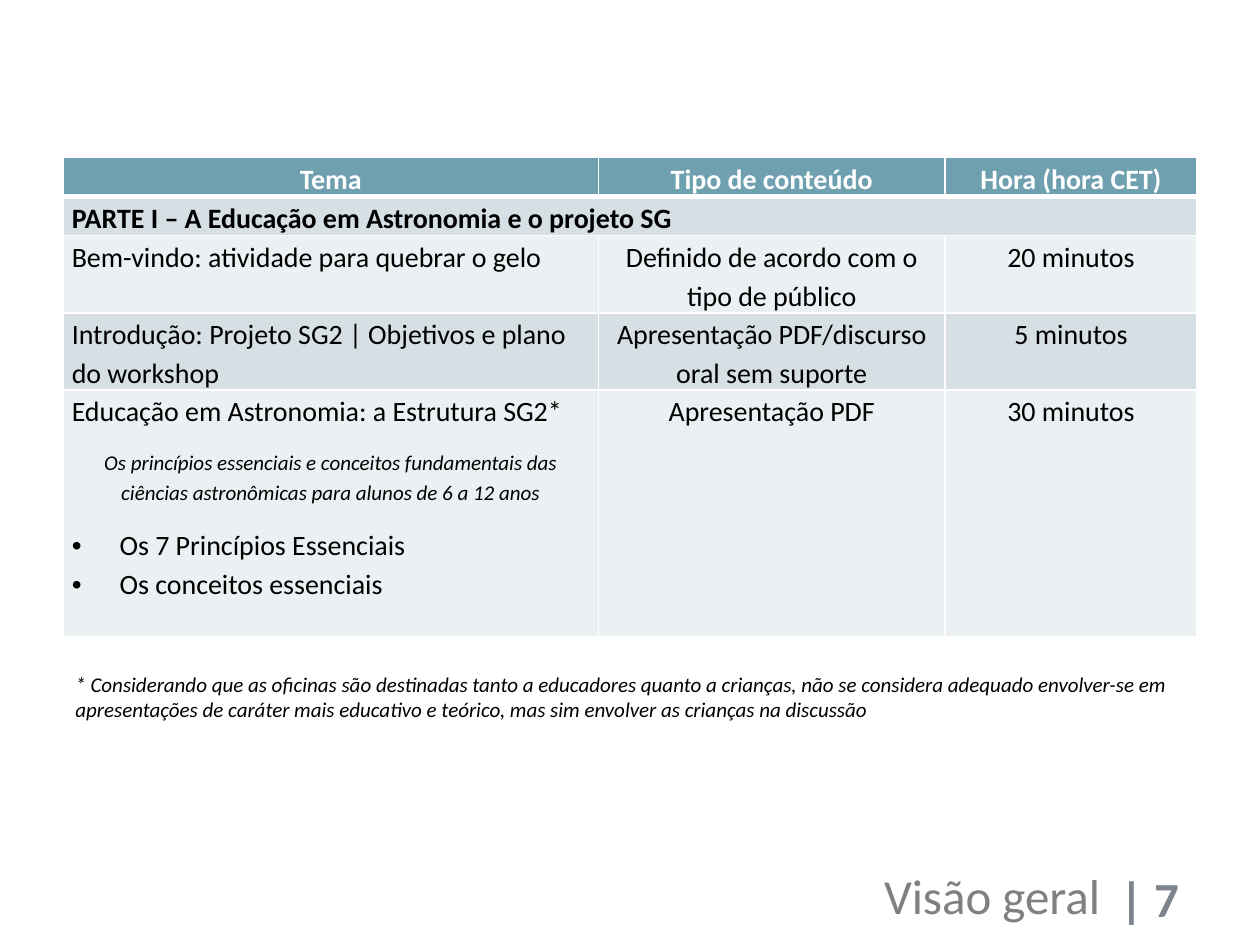
from dataclasses import dataclass

from lxml import etree
from pptx import Presentation
from pptx.dml.color import RGBColor
from pptx.enum.text import MSO_AUTO_SIZE, PP_ALIGN
from pptx.oxml.ns import qn
from pptx.util import Inches, Pt

LEFT, CENTER, RIGHT = PP_ALIGN.LEFT, PP_ALIGN.CENTER, PP_ALIGN.RIGHT
FIT_SHAPE = MSO_AUTO_SIZE.SHAPE_TO_FIT_TEXT


@dataclass(frozen=True)
class Theme:
    font: str = "Calibri"
    white: str = "FFFFFF"
    text: str = "000000"
    title: str = "808080"
    page_number: str = "7E848D"
    header_fill: str = "6EA0B0"
    dark_band: str = "D5DFE4"
    light_band: str = "EBF0F2"
    title_size: int = 28
    body_size: int = 16
    note_size: int = 12


THEME = Theme()

COLUMN_WIDTHS = [4.25, 2.75, 2]
ROW_HEIGHTS = [0.31, 0.31, 0.61, 0.61, 1.96]
HEADERS = ["Tema", "Tipo de conteúdo", "Hora (hora CET)"]
SECTION = "PARTE I – A Educação em Astronomia e o projeto SG"
SESSIONS = [
    ["Bem-vindo: atividade para quebrar o gelo",
     "Definido de acordo com o tipo de público", "20 minutos"],
    ["Introdução: Projeto SG2 | Objetivos e plano do workshop",
     "Apresentação PDF/discurso oral sem suporte", "5 minutos"],
    ["Educação em Astronomia: a Estrutura SG2*", "Apresentação PDF", "30 minutos"],
]
SUBTITLE = ("Os princípios essenciais e conceitos fundamentais das ciências "
            "astronômicas para alunos de 6 a 12 anos")
BULLETS = ["Os 7 Princípios Essenciais", "Os conceitos essenciais"]
FOOTNOTE = ("* Considerando que as oficinas são destinadas tanto a educadores quanto a "
            "crianças, não se considera adequado envolver-se em apresentações de caráter "
            "mais educativo e teórico, mas sim envolver as crianças na discussão")


def set_attributes(target, values):
    for name, value in values.items():
        setattr(target, name, value)


def write_paragraph(paragraph, text, size, color=THEME.text, alignment=LEFT, **font_format):
    paragraph.alignment = alignment
    run = paragraph.add_run()
    run.text = text
    set_attributes(run.font, {"name": THEME.font, "size": Pt(size), **font_format})
    run.font.color.rgb = RGBColor.from_string(color)


def add_text(slide, box, text, size, wrap=True, **text_format):
    shape = slide.shapes.add_textbox(*map(Inches, box))
    set_attributes(shape.text_frame, {"word_wrap": wrap, "auto_size": FIT_SHAPE})
    write_paragraph(shape.text_frame.paragraphs[0], text, size, **text_format)


def write_cell_paragraph(paragraph, text, size=THEME.body_size, space_after=10, **text_format):
    set_attributes(paragraph, {"line_spacing": 1.15, "space_after": Pt(space_after)})
    write_paragraph(paragraph, text, size, **text_format)


def add_bullet(paragraph):
    properties = paragraph._p.get_or_add_pPr()
    properties.set("marL", str(Inches(0.38)))
    properties.set("indent", str(-Inches(0.38)))
    etree.SubElement(properties, qn("a:buFont"), typeface="Arial")
    etree.SubElement(properties, qn("a:buChar"), char="•")


def style_cell(cell, fill, bottom_width=1):
    set_attributes(cell, {"margin_left": Inches(0.07), "margin_right": Inches(0.07),
                          "margin_top": 0, "margin_bottom": 0})
    # Borders come before the fill in the cell properties
    properties = cell._tc.get_or_add_tcPr()
    for side, width in {"L": 1, "R": 1, "T": 1, "B": bottom_width}.items():
        line = etree.SubElement(properties, qn(f"a:ln{side}"), w=str(Pt(width)))
        solid = etree.SubElement(line, qn("a:solidFill"))
        etree.SubElement(solid, qn("a:srgbClr"), val=THEME.white)
    cell.fill.solid()
    cell.fill.fore_color.rgb = RGBColor.from_string(fill)


def add_schedule(slide):
    frame = slide.shapes.add_table(len(ROW_HEIGHTS), len(COLUMN_WIDTHS), Inches(0.5),
                                   Inches(1.25), Inches(sum(COLUMN_WIDTHS)),
                                   Inches(sum(ROW_HEIGHTS)))
    table = frame.table
    for column, width in zip(table.columns, COLUMN_WIDTHS):
        column.width = Inches(width)
    for row, height in zip(table.rows, ROW_HEIGHTS):
        row.height = Inches(height)

    # Fills alternate below the header
    bands = [THEME.light_band, THEME.dark_band]
    for index, row in enumerate(table.rows):
        for cell in row.cells:
            if index == 0:
                style_cell(cell, THEME.header_fill, bottom_width=3)
            else:
                style_cell(cell, bands[index % 2])

    # Header and section rows
    for cell, text in zip(table.rows[0].cells, HEADERS):
        write_cell_paragraph(cell.text_frame.paragraphs[0], text, color=THEME.white,
                             alignment=CENTER, bold=True)
    section = table.cell(1, 0)
    section.merge(table.cell(1, 2))
    write_cell_paragraph(section.text_frame.paragraphs[0], SECTION, bold=True)

    # Session rows
    for row_index, session in enumerate(SESSIONS, start=2):
        for column_index, text in enumerate(session):
            paragraph = table.cell(row_index, column_index).text_frame.paragraphs[0]
            write_cell_paragraph(paragraph, text, alignment=CENTER if column_index else LEFT,
                                 bold=False)

    # Details of the last session
    details = table.cell(4, 0).text_frame
    write_cell_paragraph(details.add_paragraph(), SUBTITLE, THEME.note_size,
                         alignment=CENTER, bold=False, italic=True)
    for text in BULLETS:
        paragraph = details.add_paragraph()
        write_cell_paragraph(paragraph, text, space_after=0, bold=False)
        add_bullet(paragraph)


def main():
    presentation = Presentation()
    set_attributes(presentation, {"slide_width": Inches(10), "slide_height": Inches(7.5)})
    slide = presentation.slides.add_slide(presentation.slide_layouts[6])

    # Page number and title
    add_text(slide, (8.79, 6.84, 1.13, 0.57), "| 7", THEME.title_size, wrap=False,
             color=THEME.page_number, bold=True)
    add_text(slide, (0.33, 6.82, 8.5, 0.57), "Visão geral", THEME.title_size,
             color=THEME.title, alignment=RIGHT)

    # Schedule and its footnote
    add_schedule(slide)
    add_text(slide, (0.5, 5.28, 9, 0.5), FOOTNOTE, THEME.note_size, italic=True)

    presentation.save("out.pptx")


if __name__ == "__main__":
    main()
